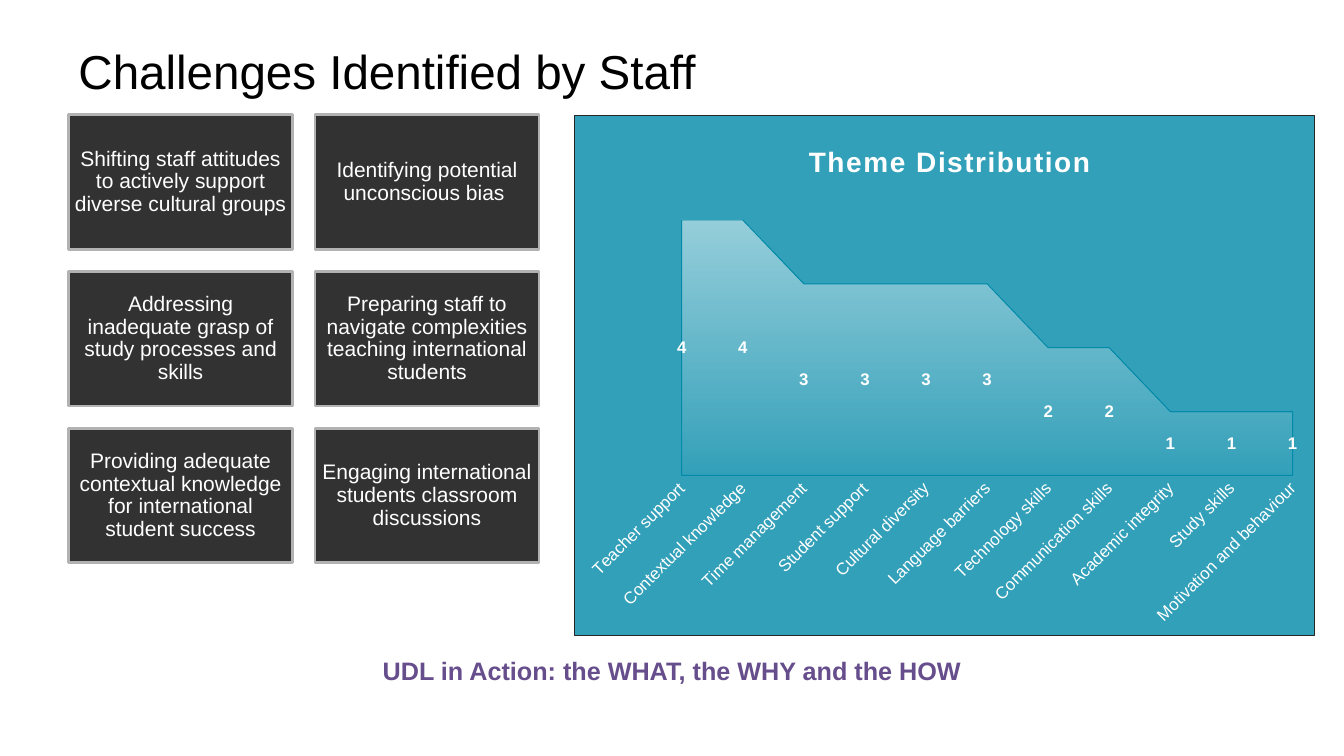
from lxml import etree
from pptx import Presentation
from pptx.chart.data import CategoryChartData
from pptx.dml.color import RGBColor
from pptx.enum.chart import XL_CHART_TYPE as ChartType, XL_TICK_MARK as TickMark
from pptx.enum.shapes import MSO_SHAPE as Shape
from pptx.enum.text import MSO_ANCHOR as Anchor, PP_ALIGN as Align
from pptx.oxml import parse_xml
from pptx.oxml.ns import nsdecls, qn
from pptx.util import Pt

CHALLENGES = [
    "Shifting staff attitudes to actively support diverse cultural groups",
    "Identifying potential unconscious bias ",
    "Addressing inadequate grasp of study processes and skills",
    "Preparing staff to navigate complexities teaching international students",
    "Providing adequate contextual knowledge for international student success",
    "Engaging international students classroom discussions",
]
THEMES = {
    "Teacher support": 4,
    "Contextual knowledge": 4,
    "Time management": 3,
    "Student support": 3,
    "Cultural diversity": 3,
    "Language barriers": 3,
    "Technology skills": 2,
    "Communication skills": 2,
    "Academic integrity": 1,
    "Study skills": 1,
    "Motivation and behaviour": 1,
}
TEAL, WHITE = "0089A8", "FFFFFF"


def color(value):
    return RGBColor.from_string(value)


def set_alpha(color_node, percent):
    etree.SubElement(color_node, qn("a:alpha")).set("val", str(percent * 1000))


def set_layout(parent, index, **fractions):
    """Place a chart part by fractions of the chart's size."""
    for old in parent.findall(qn("c:layout")):
        parent.remove(old)
    layout = etree.Element(qn("c:layout"))
    manual = etree.SubElement(layout, qn("c:manualLayout"))
    if "w" in fractions:
        etree.SubElement(manual, qn("c:layoutTarget")).set("val", "inner")
    for axis in "xy":
        etree.SubElement(manual, qn(f"c:{axis}Mode")).set("val", "edge")
    for name, value in fractions.items():
        etree.SubElement(manual, qn(f"c:{name}")).set("val", str(value))
    parent.insert(index, layout)


class Page:
    font_name = "Arial"

    def __init__(self, deck):
        self.shapes = deck.slides.add_slide(deck.slide_layouts[6]).shapes

    def style(self, font, size, ink, bold=False):
        font.name, font.size, font.bold = self.font_name, Pt(size), bold
        font.color.rgb = color(ink)

    def text(self, words, left, top, width, height, size, ink, bold=False,
             align=Align.LEFT, spacing=1.0, wrap=True):
        box = self.shapes.add_textbox(Pt(left), Pt(top), Pt(width), Pt(height))
        box.text_frame.word_wrap = wrap
        para = box.text_frame.paragraphs[0]
        para.text, para.alignment, para.line_spacing = words, align, spacing
        self.style(para.font, size, ink, bold)

    def card(self, words, left, top, width, height):
        box = self.shapes.add_shape(Shape.RECTANGLE, Pt(left), Pt(top), Pt(width), Pt(height))
        box.shadow.inherit = False
        box.fill.solid()
        box.fill.fore_color.rgb = color("323232")
        box.line.color.rgb = color("B2B2B2")
        box.line.width = Pt(2)
        frame = box.text_frame
        frame.word_wrap = True
        frame.vertical_anchor = Anchor.MIDDLE
        frame.margin_left = frame.margin_right = Pt(4.5)
        frame.margin_top = frame.margin_bottom = Pt(4.5)
        para = frame.paragraphs[0]
        para.text, para.alignment, para.line_spacing = words, Align.CENTER, 0.9
        self.style(para.font, 15, WHITE)

    def area_chart(self, title, values, left, top, width, height):
        data = CategoryChartData()
        data.categories = list(values)
        data.add_series("Series 1", list(values.values()))
        chart = self.shapes.add_chart(
            ChartType.AREA, Pt(left), Pt(top), Pt(width), Pt(height), data).chart
        chart.has_legend = False
        self.style(chart.font, 10, "000000")
        self.chart_background(chart)
        self.chart_title(chart, title)
        self.chart_axes(chart)
        self.chart_series(chart.plots[0].series[0])
        plot_area = chart._chartSpace.chart.plotArea
        set_layout(plot_area, 0, x=0.145, y=0.14, w=0.826, h=0.553)

    def chart_background(self, chart):
        chart._chartSpace.chart.addnext(parse_xml(
            f'<c:spPr {nsdecls("c", "a")}><a:solidFill><a:srgbClr val="{TEAL}">'
            '<a:alpha val="80000"/></a:srgbClr></a:solidFill><a:ln w="9525">'
            '<a:solidFill><a:srgbClr val="262626"/></a:solidFill></a:ln></c:spPr>'))

    def chart_title(self, chart, words):
        chart.has_title = True
        title = chart.chart_title
        para = title.text_frame.paragraphs[0]
        span = para.add_run()
        span.text = words
        self.style(span.font, 20, WHITE, True)
        span._r.get_or_add_rPr().set("spc", "100")
        set_layout(title._element, 1, x=0.31, y=0.045)

    def chart_axes(self, chart):
        scale = chart.value_axis
        scale.minimum_scale, scale.maximum_scale = 0, 4.5
        scale.has_major_gridlines = False
        scale.visible = False
        scale._element.find(qn("c:crossBetween")).set("val", "midCat")
        themes = chart.category_axis
        themes.has_major_gridlines = False
        themes.major_tick_mark = themes.minor_tick_mark = TickMark.NONE
        self.style(themes.tick_labels.font, 12, WHITE)
        themes._element.find(qn("c:txPr")).find(qn("a:bodyPr")).set("rot", "-2700000")
        line = themes.format.line
        line.width = Pt(0.75)
        line.color.rgb = color("76E6FF")
        set_alpha(next(themes._element.iter(qn("a:ln"))).find(".//" + qn("a:srgbClr")), 25)

    def chart_series(self, series):
        fill = series.format.fill
        fill.gradient()
        fill.gradient_angle = 270
        for stop, position, alpha in zip(fill.gradient_stops, (0, 1), (50, 0)):
            stop.color.rgb = color(WHITE)
            stop.position = position
            set_alpha(stop._gs.find(qn("a:srgbClr")), alpha)
        series.format.line.color.rgb = color(TEAL)
        series.format.line.width = Pt(0.75)
        labels = series.data_labels
        labels.show_value = True
        self.style(labels.font, 12, WHITE, True)


def main():
    deck = Presentation()
    deck.slide_width, deck.slide_height = Pt(960), Pt(540)
    page = Page(deck)
    page.text("UDL in Action: the WHAT, the WHY and the HOW", 264, 464.5, 432, 29,
              18, "664D8C", bold=True, align=Align.CENTER, wrap=False)
    page.text("Challenges Identified by Staff", 49, 31, 596, 62.5, 34, "000000", spacing=0.9)
    for index, challenge in enumerate(CHALLENGES):
        row, column = divmod(index, 2)
        page.card(challenge, 49 + 176 * column, 82 + 112 * row, 160, 96)
    page.area_chart("Theme Distribution", THEMES, 410, 82, 529, 372)
    deck.save("out.pptx")


if __name__ == "__main__":
    main()
